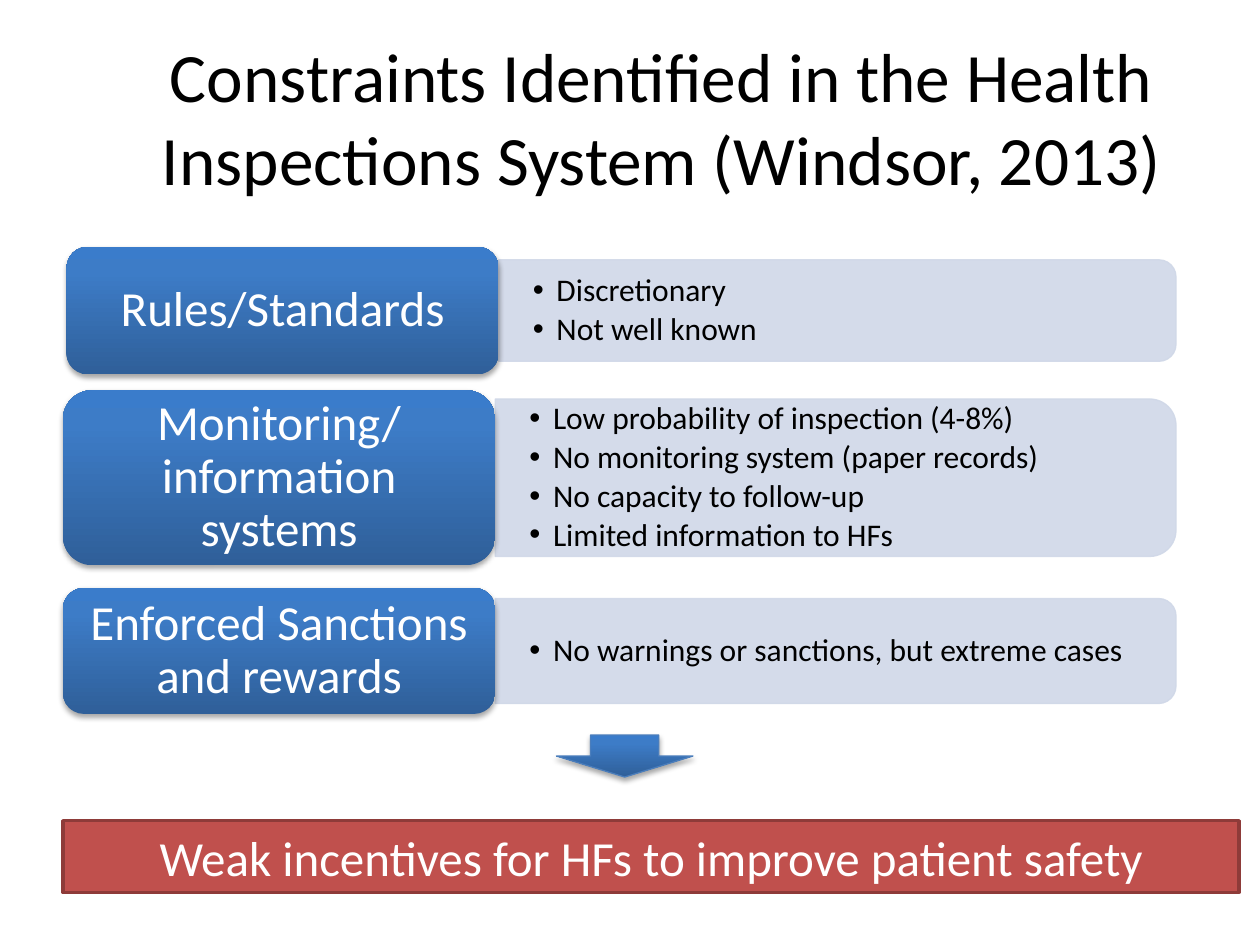
from lxml.etree import SubElement
from pptx import Presentation
from pptx.dml.color import RGBColor
from pptx.enum.shapes import MSO_SHAPE
from pptx.enum.text import MSO_ANCHOR, PP_ALIGN
from pptx.oxml.ns import qn
from pptx.util import Pt

CENTER, LEFT = PP_ALIGN.CENTER, PP_ALIGN.LEFT
MIDDLE = MSO_ANCHOR.MIDDLE
ROUNDED, TAB = MSO_SHAPE.ROUNDED_RECTANGLE, MSO_SHAPE.ROUND_2_SAME_RECTANGLE
ARROW, RECTANGLE = MSO_SHAPE.DOWN_ARROW, MSO_SHAPE.RECTANGLE
FONT = "Calibri"
COLORS = {
    "text": "000000", "light": "FFFFFF", "panel": "D0D8E8",
    "deep": "2F5F99", "blue": "3D7CC7", "bright": "3A7CCB", "edge": "4B7EBC",
    "red": "C0504D", "red_edge": "8E3B39",
}
PANEL_RIGHT = 672
CONSTRAINTS = [
    ((38, 141, 247, 73), 58, "Rules/Standards", ["Discretionary", "Not well known"]),
    ((36, 223, 247, 100), 90, "Monitoring/information systems", [
        "Low probability of inspection (4-8%)",
        "No monitoring system (paper records)",
        "No capacity to follow-up",
        "Limited information to HFs",
    ]),
    ((36, 336, 247, 72), 60, "Enforced Sanctions and rewards",
     ["No warnings or sanctions, but extreme cases"]),
]


def color(name):
    """Return the named colour."""
    return RGBColor.from_string(COLORS[name])


def add_child(parent, tag, **attributes):
    """Append a drawing element with the given attributes."""
    return SubElement(parent, qn(f"a:{tag}"),
                      {key: str(value) for key, value in attributes.items()})


def place_shape(page, kind, box, edge=None, width=0.75):
    """Add a shape in the box with a plain outline or none, and no shadow."""
    shape = page.shapes.add_shape(kind, *map(Pt, box))
    shape.shadow.inherit = False
    if edge:
        shape.line.color.rgb = color(edge)
        shape.line.width = Pt(width)
    else:
        shape.line.fill.background()
    return shape


def style_raised(shape):
    """Give a shape the blue gradient and a soft shadow below it."""
    shape.fill.gradient()
    gradient = shape._element.spPr.find(qn("a:gradFill"))
    stops = gradient.find(qn("a:gsLst"))
    for stop in list(stops):
        stops.remove(stop)
    for position, name in ((0, "deep"), (80, "blue"), (100, "bright")):
        stop = add_child(stops, "gs", pos=position * 1000)
        add_child(stop, "srgbClr", val=COLORS[name])
    gradient.find(qn("a:lin")).set("ang", "16200000")
    effects = shape._element.spPr.find(qn("a:effectLst"))
    shadow = add_child(effects, "outerShdw", blurRad=Pt(3.1), dist=Pt(1.8),
                       dir=5400000, rotWithShape=0)
    add_child(add_child(shadow, "srgbClr", val=COLORS["text"]), "alpha", val=35000)


def write_text(shape, lines, size, ink, align=CENTER, inset=7.2, spacing=1.0):
    """Fill a shape with vertically centred paragraphs and return them."""
    frame = shape.text_frame
    frame.word_wrap = True
    frame.vertical_anchor = MIDDLE
    frame.margin_left = frame.margin_right = Pt(inset)
    frame.margin_top = frame.margin_bottom = Pt(0)
    frame.text = "\n".join(lines)
    for para in frame.paragraphs:
        para.alignment = align
        para.line_spacing = spacing
        para.font.name = FONT
        para.font.size = Pt(size)
        para.font.color.rgb = color(ink)
    return frame.paragraphs


def add_panel(page, box, points):
    """Add a pale panel, rounded on the right, with its bullet points."""
    left, top, width, height = box
    shift = (width - height) / 2
    panel = place_shape(page, TAB, (left + shift, top - shift, height, width), "panel")
    panel.rotation = 90
    panel.fill.solid()
    panel.fill.fore_color.rgb = color("panel")
    for tint in panel._element.spPr.iter(qn("a:srgbClr")):
        add_child(tint, "alpha", val=90000)
    text_box = page.shapes.add_textbox(*map(Pt, box))
    for para in write_text(text_box, points, 18, "text", LEFT, 19.5, 0.9):
        para.space_after = Pt(2.7)
        properties = para._p.get_or_add_pPr()
        properties.set("marL", str(Pt(13.5)))
        properties.set("indent", str(Pt(-13.5)))
        add_child(properties, "buFont", typeface="Arial")
        add_child(properties, "buChar", char="•")


def add_constraint(page, box, panel_height, heading, points):
    """Add a raised heading card and the panel that extends to its right."""
    left, top, width, height = box
    panel_left = left + width
    panel_top = top + (height - panel_height) / 2
    add_panel(page, (panel_left, panel_top, PANEL_RIGHT - panel_left, panel_height), points)
    card = place_shape(page, ROUNDED, box)
    style_raised(card)
    write_text(card, [heading], 28, "light", inset=9, spacing=0.9)


def add_conclusion(page, arrow_box, banner_box, message):
    """Add the down arrow and the red banner it leads to."""
    style_raised(place_shape(page, ARROW, arrow_box, "edge"))
    banner = place_shape(page, RECTANGLE, banner_box, "red_edge", 2)
    banner.fill.solid()
    banner.fill.fore_color.rgb = color("red")
    write_text(banner, [message], 28, "light")


def set_title(page, box, text):
    """Move and format the title placeholder."""
    title = page.shapes.title
    title.left, title.top, title.width, title.height = map(Pt, box)
    write_text(title, [text], 39.6, "text")


def main():
    """Build and save the slide."""
    deck = Presentation()
    deck.slide_width, deck.slide_height = Pt(720), Pt(540)
    page = deck.slides.add_slide(deck.slide_layouts[5])
    set_title(page, (36, 21.6, 684, 90),
              "Constraints Identified in the Health Inspections System (Windsor, 2013)")
    for constraint in CONSTRAINTS:
        add_constraint(page, *constraint)
    add_conclusion(page, (318, 420, 78, 24), (36, 469, 672, 41),
                   "Weak incentives for HFs to improve patient safety")
    deck.save("out.pptx")


if __name__ == "__main__":
    main()
